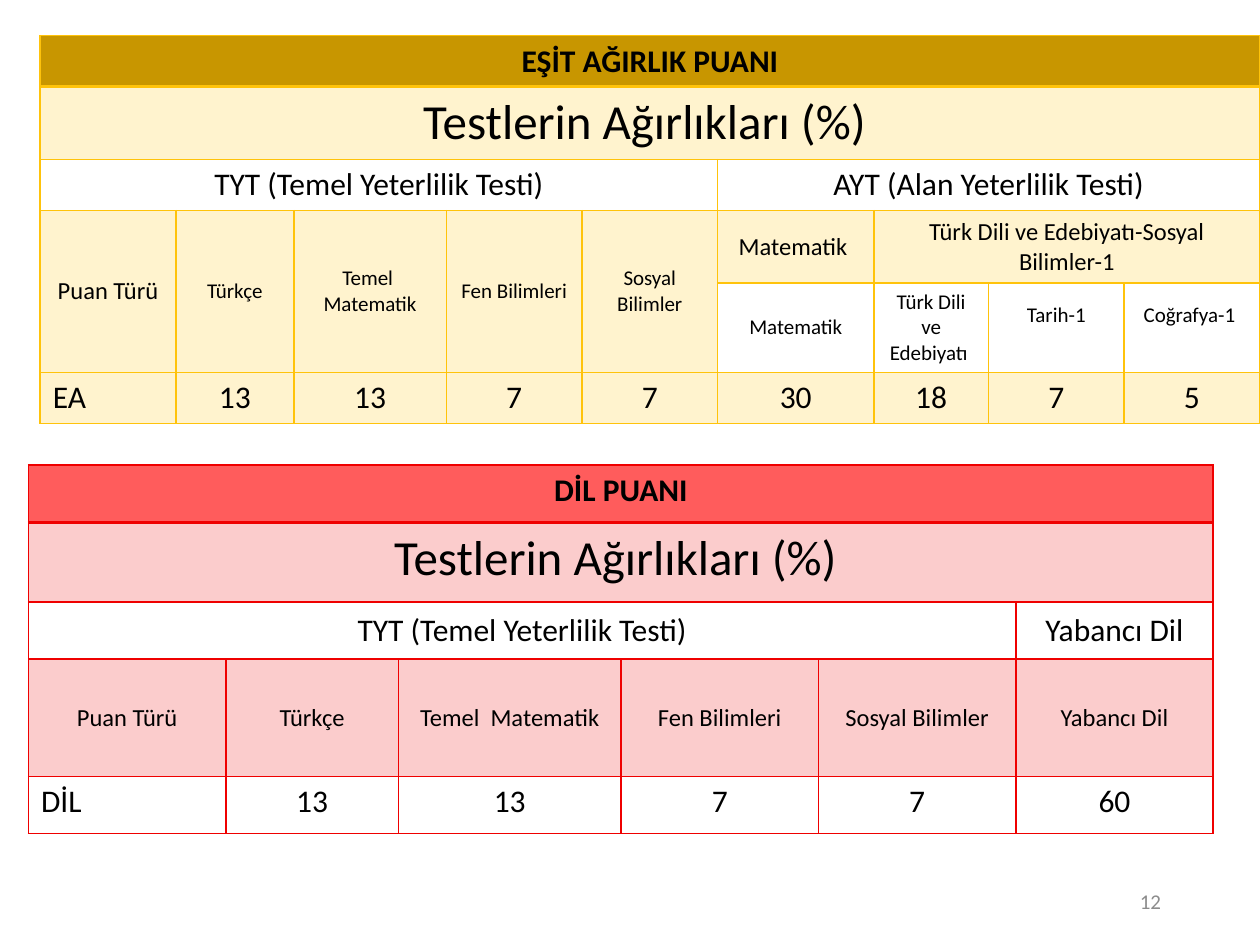
from dataclasses import dataclass

from lxml.etree import SubElement
from pptx import Presentation
from pptx.dml.color import RGBColor
from pptx.enum.text import MSO_ANCHOR, PP_ALIGN
from pptx.oxml import parse_xml
from pptx.oxml.ns import nsdecls, qn
from pptx.util import Pt

COLORS = {
    "text": "000000",
    "number": "8C8C8C",
    "gold": "FFC30B",
    "gold_header": "C89600",
    "red": "EF0000",
    "red_header": "FF5C5C",
}
FONT = "Calibri"
TINT = 20  # opacity of tinted cells, in percent


@dataclass
class Cell:
    text: str
    size: float = 18
    cols: int = 1
    rows: int = 1
    fill: str | None = None
    opacity: int = TINT
    bold: bool = False
    align: PP_ALIGN = PP_ALIGN.CENTER
    anchor: MSO_ANCHOR = MSO_ANCHOR.MIDDLE
    bottom: float = 3.6


@dataclass
class ScoreTable:
    left: float
    top: float
    widths: list[float]
    heights: list[float]
    line: str
    rows: list[list[Cell]]


def write_text(tf, text: str, *, size: float, color: str = "text",
               bold: bool = False, align: PP_ALIGN = PP_ALIGN.CENTER) -> None:
    p = tf.paragraphs[0]
    p.alignment = align
    r = p.add_run()
    r.text = text
    r.font.name = FONT
    r.font.size = Pt(size)
    r.font.bold = bold
    r.font.color.rgb = RGBColor.from_string(COLORS[color])


def set_borders(cell, color: str, widths: dict[str, float]) -> None:
    """Put the border lines first in the cell properties, as the schema asks."""
    tc_pr = cell._tc.get_or_add_tcPr()
    for i, (side, width) in enumerate(widths.items()):
        tc_pr.insert(i, parse_xml(
            f'<a:ln{side} {nsdecls("a")} w="{Pt(width)}"><a:solidFill>'
            f'<a:srgbClr val="{COLORS[color]}"/></a:solidFill></a:ln{side}>'))


def fill_cell(cell, color: str | None, opacity: int) -> None:
    if color is None:
        cell.fill.background()
        return
    cell.fill.solid()
    cell.fill.fore_color.rgb = RGBColor.from_string(COLORS[color])
    if opacity < 100:
        rgb = cell._tc.tcPr.find(f'{qn("a:solidFill")}/{qn("a:srgbClr")}')
        SubElement(rgb, qn("a:alpha")).set("val", str(opacity * 1000))


def draw_table(s, table: ScoreTable) -> None:
    n_rows, n_cols = len(table.heights), len(table.widths)
    tbl = s.shapes.add_table(
        n_rows, n_cols, Pt(table.left), Pt(table.top),
        Pt(sum(table.widths)), Pt(sum(table.heights))).table
    tbl.first_row = tbl.horz_banding = False
    for column, width in zip(tbl.columns, table.widths):
        column.width = Pt(width)
    for row, height in zip(tbl.rows, table.heights):
        row.height = Pt(height)

    for i, row in enumerate(table.rows):
        j = 0
        for item in row:
            while tbl.cell(i, j).is_spanned:
                j += 1
            cell = tbl.cell(i, j)
            if item.rows * item.cols > 1:
                cell.merge(tbl.cell(i + item.rows - 1, j + item.cols - 1))
            cell.vertical_anchor = item.anchor
            cell.margin_bottom = Pt(item.bottom)
            write_text(cell.text_frame, item.text, size=item.size,
                       bold=item.bold, align=item.align)
            fill_cell(cell, item.fill, item.opacity)
            j += item.cols

    for i in range(n_rows):
        top, bottom = (2 if i == 1 else 1), (2 if i == 0 else 1)
        for j in range(n_cols):
            set_borders(tbl.cell(i, j), table.line,
                        {"L": 1, "R": 1, "T": top, "B": bottom})


def heading_rows(title: str, cols: int, color: str) -> list[list[Cell]]:
    top = MSO_ANCHOR.TOP
    return [
        [Cell(title, cols=cols, fill=f"{color}_header", opacity=100,
              bold=True, anchor=top)],
        [Cell("Testlerin Ağırlıkları (%) ", 28, cols=cols, fill=color, anchor=top)],
    ]


def score_row(name: str, scores: list[int], fill: str | None = None) -> list[Cell]:
    top = MSO_ANCHOR.TOP
    return [Cell(name, fill=fill, align=PP_ALIGN.LEFT, anchor=top),
            *(Cell(str(n), fill=fill, anchor=top) for n in scores)]


TYT = Cell("TYT (Temel Yeterlilik Testi)", cols=5)
SUBJECTS = ["Türkçe", "Temel  Matematik", "Fen Bilimleri", "Sosyal Bilimler"]

LANGUAGE = ScoreTable(
    left=16.3, top=265.8, line="red",
    widths=[112.8, 98.6, 127.2, 112.8, 112.8, 112.8],
    heights=[32.6, 45.6, 32.6, 67.2, 32.6],
    rows=[
        *heading_rows("DİL PUANI", 6, "red"),
        [TYT, Cell("Yabancı Dil")],
        [Cell(t, 14, fill="red") for t in ["Puan Türü", *SUBJECTS, "Yabancı Dil"]],
        score_row("DİL", [13, 13, 7, 7, 60]),
    ])

EQUAL_WEIGHT = ScoreTable(
    left=23, top=20.4, line="gold",
    widths=[77.5, 67.4, 87.2, 77.5, 77.5, 89.3, 65.5, 77.5, 77.5],
    heights=[29.2, 41.6, 29.2, 41, 51, 29.2],
    rows=[
        *heading_rows("EŞİT AĞIRLIK PUANI", 9, "gold"),
        [TYT, Cell("AYT (Alan Yeterlilik Testi)", cols=4)],
        [Cell("Puan Türü", 14, rows=2, fill="gold"),
         *(Cell(t, 12, rows=2, fill="gold") for t in SUBJECTS),
         Cell("Matematik ", 14, fill="gold"),
         Cell("Türk Dili ve Edebiyatı-Sosyal Bilimler-1", 14, cols=3, fill="gold")],
        [Cell("Matematik", 12), Cell("Türk Dili ve Edebiyatı ", 12),
         Cell("Tarih-1", 12, bottom=18), Cell("Coğrafya-1 ", 12, bottom=18)],
        score_row("EA", [13, 13, 7, 7, 30, 18, 7, 5], "gold"),
    ])


def main() -> None:
    prs = Presentation()
    prs.slide_width, prs.slide_height = Pt(720), Pt(540)
    s = prs.slides.add_slide(prs.slide_layouts[6])
    for table in (LANGUAGE, EQUAL_WEIGHT):
        draw_table(s, table)

    tf = s.shapes.add_textbox(Pt(508.5), Pt(500.5), Pt(162), Pt(28.8)).text_frame
    tf.word_wrap = True
    tf.vertical_anchor = MSO_ANCHOR.MIDDLE
    write_text(tf, "12", size=12, color="number", align=PP_ALIGN.RIGHT)
    prs.save("out.pptx")


if __name__ == "__main__":
    main()
